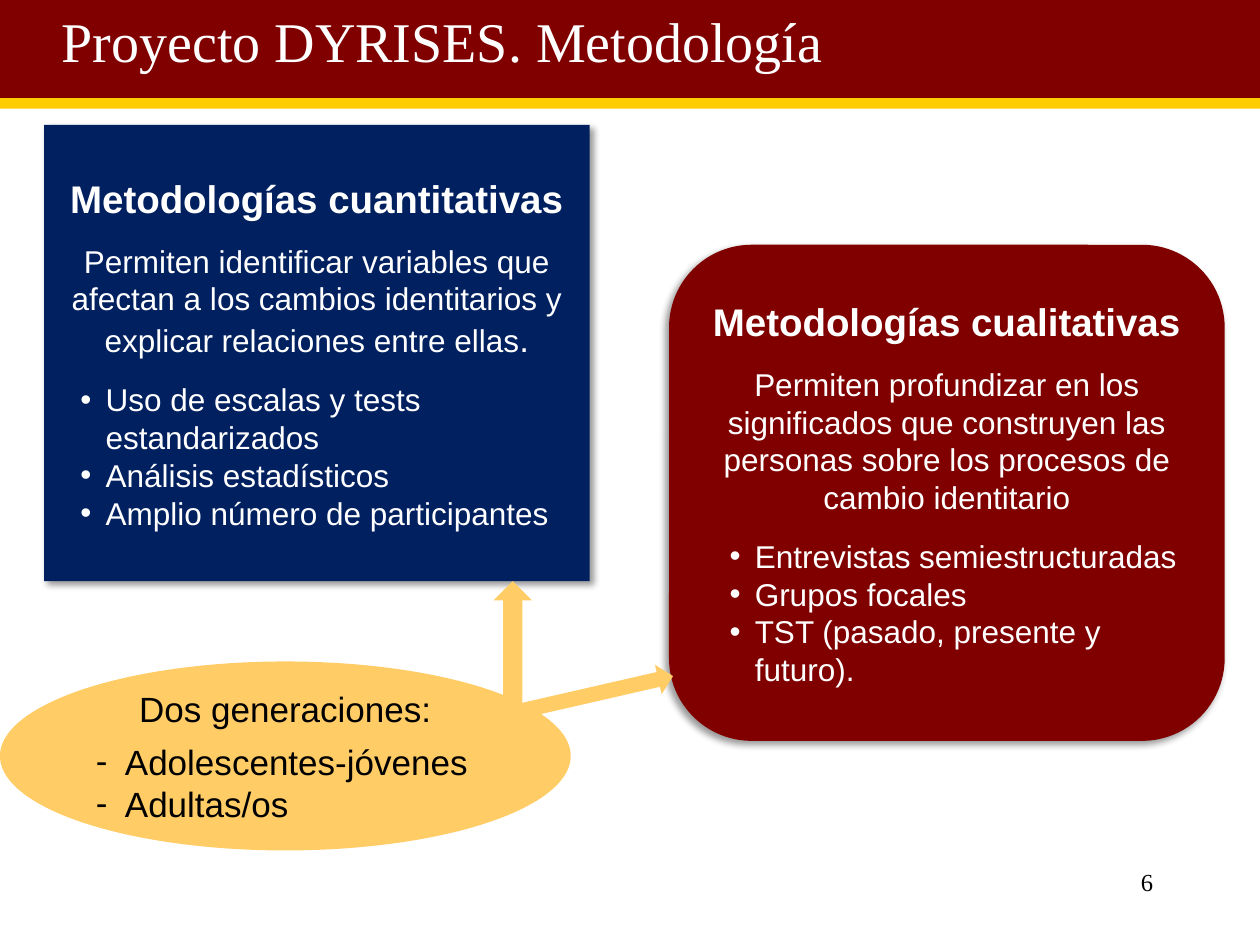
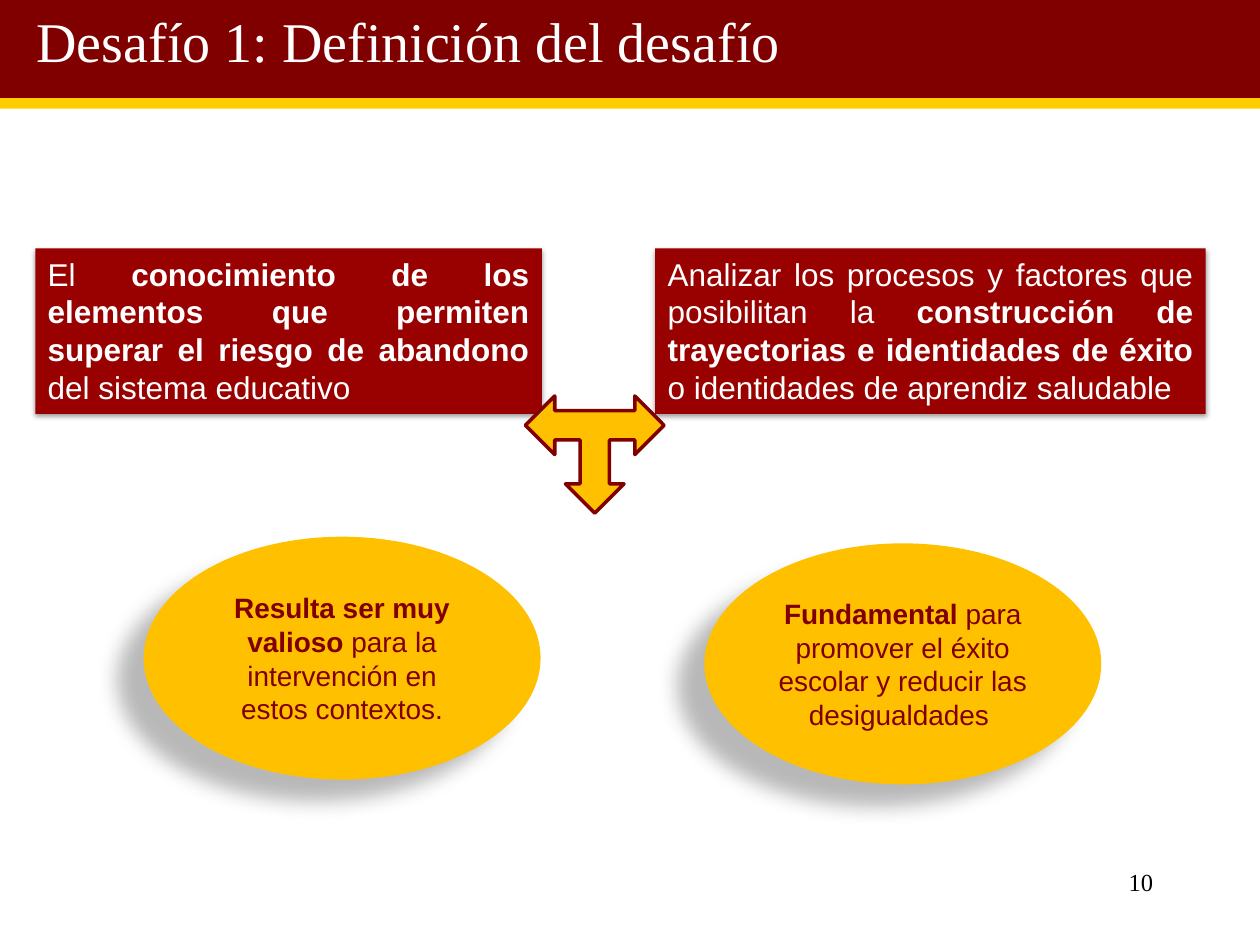
"""Build two slides on the methodology and first challenge of a study."""
from lxml import etree
from pptx import Presentation, util as u
from pptx.dml.color import RGBColor
from pptx.enum import shapes, text
from pptx.oxml.ns import qn

MAROON = RGBColor(0x80, 0x00, 0x00)
RED = RGBColor(0x99, 0x00, 0x00)
NAVY = RGBColor(0x00, 0x20, 0x60)
YELLOW = RGBColor(0xFF, 0xCC, 0x00)
SAND = RGBColor(0xFF, 0xCC, 0x66)
AMBER = RGBColor(0xFF, 0xC0, 0x00)
WHITE = RGBColor(0xFF, 0xFF, 0xFF)
BLACK = RGBColor(0x00, 0x00, 0x00)
SERIF, SANS = "Times New Roman", "Arial"
KIND = shapes.MSO_SHAPE
LEFT, CENTER = text.PP_ALIGN.LEFT, text.PP_ALIGN.CENTER
RIGHT, JUSTIFY = text.PP_ALIGN.RIGHT, text.PP_ALIGN.JUSTIFY
TOP, MIDDLE = text.MSO_ANCHOR.TOP, text.MSO_ANCHOR.MIDDLE

prs = Presentation()
prs.slide_width, prs.slide_height = u.Inches(10), u.Inches(7.5)
COL, ROW = prs.slide_width / 100, prs.slide_height / 100


def add_block(s, kind, x, y, w, h, fill, shadow=None, rotation=0):
    """Add a filled shape, placed in hundredths of the slide."""
    sp = s.shapes.add_shape(kind, int(x * COL), int(y * ROW), int(w * COL), int(h * ROW))
    sp.fill.solid()
    sp.fill.fore_color.rgb = fill
    sp.line.fill.background()
    sp.rotation = rotation
    sp.shadow.inherit = False
    if shadow:
        alpha, blur, dist, angle = shadow
        effects = sp._element.spPr.find(qn("a:effectLst"))
        outer = etree.SubElement(effects, qn("a:outerShdw"), blurRad=str(u.Pt(blur)),
                                 dist=str(u.Pt(dist)), dir=str(angle * 60000),
                                 algn="ctr", rotWithShape="0")
        color = etree.SubElement(outer, qn("a:srgbClr"), val="000000")
        etree.SubElement(color, qn("a:alpha"), val=str(alpha * 1000))
    return sp


def add_text(tf, runs, color, align=LEFT, after=0, bullet=None, margin=0, indent=0, font=SANS):
    """Write (text, size, bold) runs into the first empty or a new paragraph."""
    tf.word_wrap = True
    p = tf.paragraphs[0] if not tf.text else tf.add_paragraph()
    p.alignment, p.space_after = align, u.Pt(after)
    pPr = p._p.get_or_add_pPr()
    pPr.set("marL", str(u.Inches(margin)))
    pPr.set("indent", str(u.Inches(indent)))
    if bullet:
        etree.SubElement(pPr, qn("a:buFont"), typeface=SANS)
        etree.SubElement(pPr, qn("a:buChar"), char=bullet)
    for words, size, bold in runs:
        r = p.add_run()
        r.text = words
        r.font.name, r.font.size, r.font.bold = font, u.Pt(size), bold
        r.font.color.rgb = color
    return p


slides = []
for title, margin, number in [("Proyecto DYRISES. Metodología", 0.39, "6"),
                              ("Desafío 1: Definición del desafío", 0.19, "10")]:
    s = prs.slides.add_slide(prs.slide_layouts[5])
    band = s.shapes.title
    band.left, band.top, band.width, band.height = 0, 0, prs.slide_width, int(10.5 * ROW)
    band.fill.solid()
    band.fill.fore_color.rgb = MAROON
    tf = band.text_frame
    tf.vertical_anchor, tf.auto_size = TOP, text.MSO_AUTO_SIZE.NONE
    p = add_text(tf, [(title, 32, False)], WHITE, after=18, margin=margin, font=SERIF)
    p.space_before = u.Pt(6)
    add_block(s, KIND.RECTANGLE, 0, 10.4, 100, 1.1, YELLOW)
    box = s.shapes.add_textbox(int(71.7 * COL), int(91.1 * ROW), int(20.8 * COL), int(6.7 * ROW))
    add_text(box.text_frame, [(number, 14, False)], BLACK, RIGHT, font=SERIF)
    slides.append(s)
methods, challenge = slides

panels = [
    (KIND.RECTANGLE, (3.5, 13.2, 43.3, 48.3), NAVY, 45, "Metodologías cuantitativas",
     [("Permiten identificar variables que afectan a los cambios identitarios y "
       "explicar relaciones entre ellas", 18, False), (".", 20, False)],
     ["Uso de escalas y tests estandarizados", "Análisis estadísticos",
      "Amplio número de participantes"]),
    (KIND.ROUNDED_RECTANGLE, (53.1, 25.9, 44.1, 52.5), MAROON, 135, "Metodologías cualitativas",
     [("Permiten profundizar en los significados que construyen las personas sobre "
       "los procesos de cambio identitario", 18, False)],
     ["Entrevistas semiestructuradas", "Grupos focales", "TST (pasado, presente y futuro)."]),
]
for kind, place, fill, angle, heading, purpose, tools in panels:
    tf = add_block(methods, kind, *place, fill, (40, 4, 3, angle)).text_frame
    tf.vertical_anchor = MIDDLE
    add_text(tf, [(heading, 22, True)], WHITE, CENTER, 12)
    add_text(tf, purpose, WHITE, CENTER, 12)
    for tool in tools:
        add_text(tf, [(tool, 18, False)], WHITE, bullet="•", margin=0.39, indent=-0.2)

tf = add_block(methods, KIND.OVAL, 0, 70, 45.3, 20, SAND).text_frame
tf.vertical_anchor = MIDDLE
add_text(tf, [("Dos generaciones:", 20, False)], BLACK, CENTER, 6)
for generation in ["Adolescentes-jóvenes", "Adultas/os"]:
    add_text(tf, [(generation, 20, False)], BLACK, bullet="-", margin=0.23, indent=-0.23)
add_block(methods, KIND.RIGHT_ARROW, 35.4, 66.5, 10.6, 4.1, SAND, rotation=270)
add_block(methods, KIND.RIGHT_ARROW, 39.1, 72.1, 14.5, 3.2, SAND, rotation=347.1)

goals = [
    (2.8, 40.2, [("El ", 18, False),
                 ("conocimiento de los elementos que permiten superar el riesgo de abandono", 18, True),
                 (" del sistema educativo", 18, False)]),
    (52, 43.7, [("Analizar los procesos y factores que posibilitan la ", 18, False),
                ("construcción de trayectorias e identidades de éxito ", 18, True),
                ("o identidades de aprendiz saludable", 18, False)]),
]
for x, w, runs in goals:
    tf = add_block(challenge, KIND.RECTANGLE, x, 26.3, w, 17.5, RED, (38, 3.1, 1.6, 90)).text_frame
    tf.vertical_anchor, tf.auto_size = TOP, text.MSO_AUTO_SIZE.SHAPE_TO_FIT_TEXT
    add_text(tf, runs, WHITE, JUSTIFY, 12)

values = [
    (11.4, 56.8, 25.7, "Resulta ser muy valioso ", "para la intervención en estos contextos."),
    (55.9, 57.5, 25.5, "Fundamental ", "para promover el éxito escolar y reducir las desigualdades "),
]
for x, y, h, lead, rest in values:
    tf = add_block(challenge, KIND.OVAL, x, y, 31.5, h, AMBER, (28, 11.8, 19.7, 141)).text_frame
    tf.vertical_anchor = MIDDLE
    add_text(tf, [(lead, 16, True), (rest, 16, False)], MAROON, CENTER)

fork = add_block(challenge, KIND.LEFT_RIGHT_UP_ARROW, 41.7, 41.9, 11, 12.4, AMBER, rotation=180)
fork.line.color.rgb = MAROON
fork.line.width = u.Pt(2)

prs.save("out.pptx")
